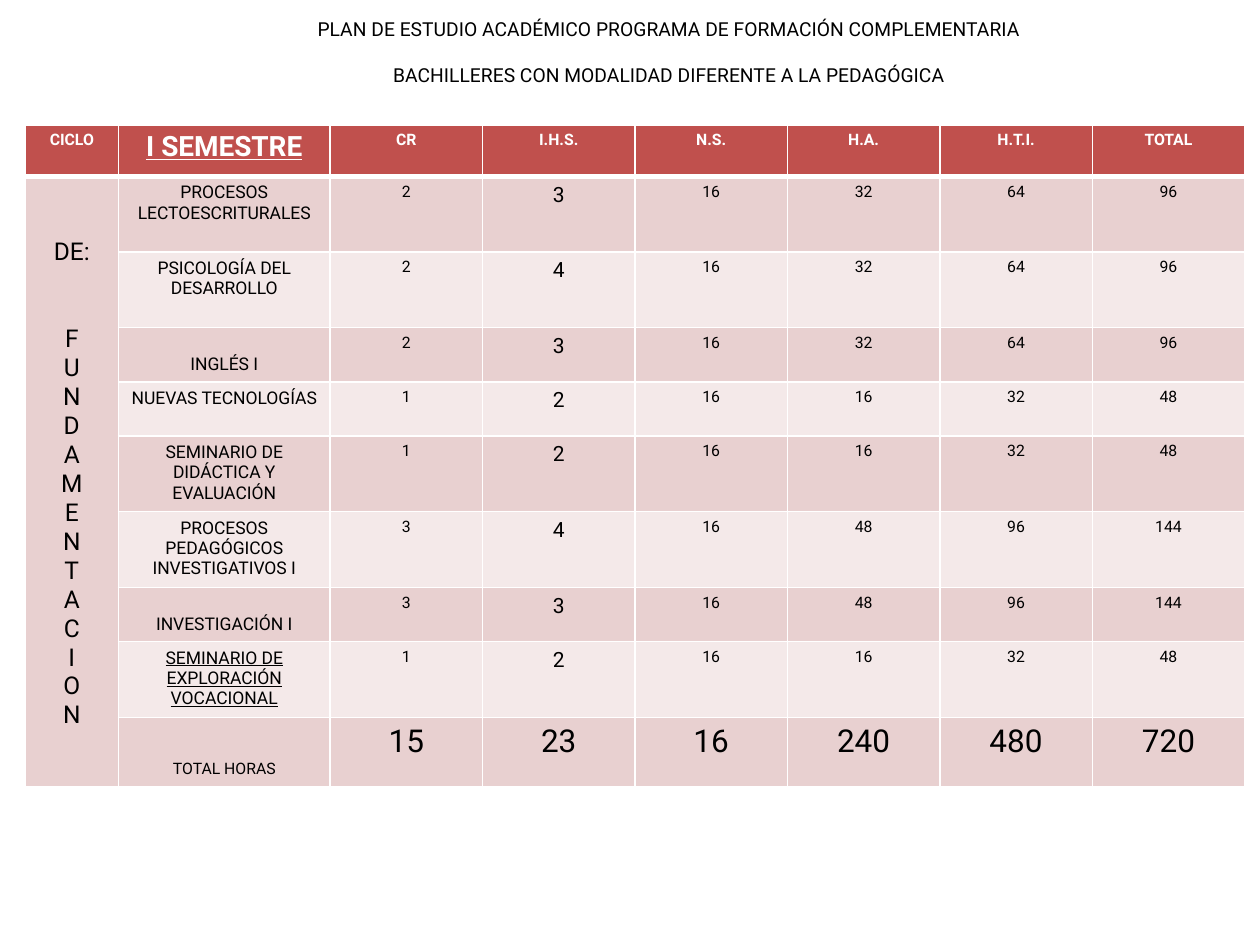
"""Build the study plan slide of the first semester."""
from typing import NamedTuple

from lxml.etree import SubElement
from pptx import Presentation
from pptx.dml.color import RGBColor as Rgb
from pptx.enum.text import MSO_ANCHOR as Anchor, MSO_AUTO_SIZE as AutoSize, PP_ALIGN as Align
from pptx.oxml.ns import qn
from pptx.util import Inches, Pt

COLORS = {"ink": "000000", "white": "FFFFFF", "header": "C0504D",
          "dark_band": "E8D0D0", "light_band": "F4E9E9"}
FONT = "Roboto"
LINE_FACTOR = 1.17
CELL_MARGIN = 0.05
BORDER_TAGS = ("a:lnL", "a:lnR", "a:lnT", "a:lnB")


class Course(NamedTuple):
    name: str
    hours: tuple
    height: float
    top_gap: float = 0
    underline: bool = False


HEADINGS = ("CICLO", "I SEMESTRE", "CR", "I.H.S.", "N.S.", "H.A.", "H.T.I.", "TOTAL")
HEADER_HEIGHT = 0.41
COLUMN_WIDTHS = [0.74, 1.68] + [1.21] * 6
COURSES = (
    Course("PROCESOS LECTOESCRITURALES", (2, 3, 16, 32, 64, 96), 0.6),
    Course("PSICOLOGÍA DEL DESARROLLO", (2, 4, 16, 32, 64, 96), 0.6),
    Course("INGLÉS I", (2, 3, 16, 32, 64, 96), 0.43, 0.16),
    Course("NUEVAS TECNOLOGÍAS", (1, 2, 16, 16, 32, 48), 0.43),
    Course("SEMINARIO DE DIDÁCTICA Y EVALUACIÓN", (1, 2, 16, 16, 32, 48), 0.6),
    Course("PROCESOS PEDAGÓGICOS INVESTIGATIVOS I", (3, 4, 16, 48, 96, 144), 0.6),
    Course("INVESTIGACIÓN I", (3, 3, 16, 48, 96, 144), 0.43, 0.16),
    Course("SEMINARIO DE EXPLORACIÓN VOCACIONAL", (1, 2, 16, 16, 32, 48), 0.6,
           underline=True),
)
TOTALS = Course("TOTAL HORAS", (15, 23, 16, 240, 480, 720), 0.55, 0.29)


def write_lines(frame, lines, size: float, color: str = "ink", gap_lines: int = 0, **extra) -> None:
    """Write centred paragraphs, with a gap of whole lines before the second."""
    font_format = {"name": FONT, "size": Pt(size), "bold": False, "underline": False} | extra
    for position, line in enumerate(lines):
        paragraph = frame.paragraphs[0] if position == 0 else frame.add_paragraph()
        paragraph.alignment = Align.CENTER
        if position == 1 and gap_lines:
            paragraph.space_before = Pt(round(gap_lines * size * LINE_FACTOR, 1))
        run = paragraph.add_run()
        run.text = line
        for attribute, value in font_format.items():
            setattr(run.font, attribute, value)
        run.font.color.rgb = Rgb.from_string(COLORS[color])


def style_cell(cell, fill: str, top_gap: float = 0, **widths: float) -> None:
    """Give a cell its fill, top margin and white borders."""
    cell.margin_top = Inches(CELL_MARGIN + top_gap)
    properties = cell._tc.get_or_add_tcPr()
    for tag in BORDER_TAGS:
        border = SubElement(properties, qn(tag), w=str(Pt(widths.get(tag[2:], 1))))
        solid = SubElement(border, qn("a:solidFill"))
        SubElement(solid, qn("a:srgbClr"), val=COLORS["white"])
    cell.fill.solid()
    cell.fill.fore_color.rgb = Rgb.from_string(COLORS[fill])


def add_title(slide) -> None:
    """Fill the title placeholder with the two heading lines."""
    title = slide.shapes.title
    place = {"left": 2.24, "top": 0.09, "width": 6.14, "height": 0.66}
    for attribute, value in place.items():
        setattr(title, attribute, Inches(value))
    frame = title.text_frame
    frame_format = {"word_wrap": True, "vertical_anchor": Anchor.TOP,
                    "auto_size": AutoSize.SHAPE_TO_FIT_TEXT}
    for attribute, value in frame_format.items():
        setattr(frame, attribute, value)
    write_lines(frame, ("PLAN DE ESTUDIO ACADÉMICO PROGRAMA DE FORMACIÓN COMPLEMENTARIA",
                        "BACHILLERES CON MODALIDAD DIFERENTE A LA PEDAGÓGICA"), 11, gap_lines=1)


def fill_course(table, row: int, course: Course) -> None:
    """Write the name and hours of one course row."""
    is_total = course is TOTALS
    band = "dark_band" if row % 2 else "light_band"
    top_border = 3 if row == 1 else 1
    name_cell = table.cell(row, 1)
    style_cell(name_cell, band, course.top_gap, lnT=top_border)
    write_lines(name_cell.text_frame, [course.name], 9 if is_total else 10,
                underline=course.underline)
    for column, hours in enumerate(course.hours, start=2):
        size = 18 if is_total else 12 if HEADINGS[column] == "I.H.S." else 9
        style_cell(table.cell(row, column), band, lnT=top_border)
        write_lines(table.cell(row, column).text_frame, [str(hours)], size)


def add_plan(slide) -> None:
    """Add the table of courses with its merged cycle column."""
    courses = (*COURSES, TOTALS)
    heights = [HEADER_HEIGHT] + [course.height for course in courses]
    table = slide.shapes.add_table(
        len(heights), len(HEADINGS), Inches(0.2), Inches(0.99),
        Inches(sum(COLUMN_WIDTHS)), Inches(sum(heights))).table
    table.horz_banding = False
    for column, width in zip(table.columns, COLUMN_WIDTHS):
        column.width = Inches(width)
    for row, height in zip(table.rows, heights):
        row.height = Inches(height)

    for column, heading in enumerate(HEADINGS):
        is_semester = heading == "I SEMESTRE"
        style_cell(table.cell(0, column), "header", lnB=3)
        write_lines(table.cell(0, column).text_frame, [heading], 16 if is_semester else 9,
                    "white", bold=True, underline=is_semester)
    for row, course in enumerate(courses, start=1):
        fill_course(table, row, course)

    cycle = table.cell(1, 0)
    cycle.merge(table.cell(len(courses), 0))
    style_cell(cycle, "dark_band", 0.44, lnT=3)
    write_lines(cycle.text_frame, ["DE:", *"FUNDAMENTACION"], 14, gap_lines=2)


def main() -> None:
    """Create the presentation and save it."""
    deck = Presentation()
    deck.slide_width, deck.slide_height = Inches(10), Inches(7.5)
    slide = deck.slides.add_slide(deck.slide_layouts.get_by_name("Title Only"))
    add_title(slide)
    add_plan(slide)
    deck.save("out.pptx")


if __name__ == "__main__":
    main()
